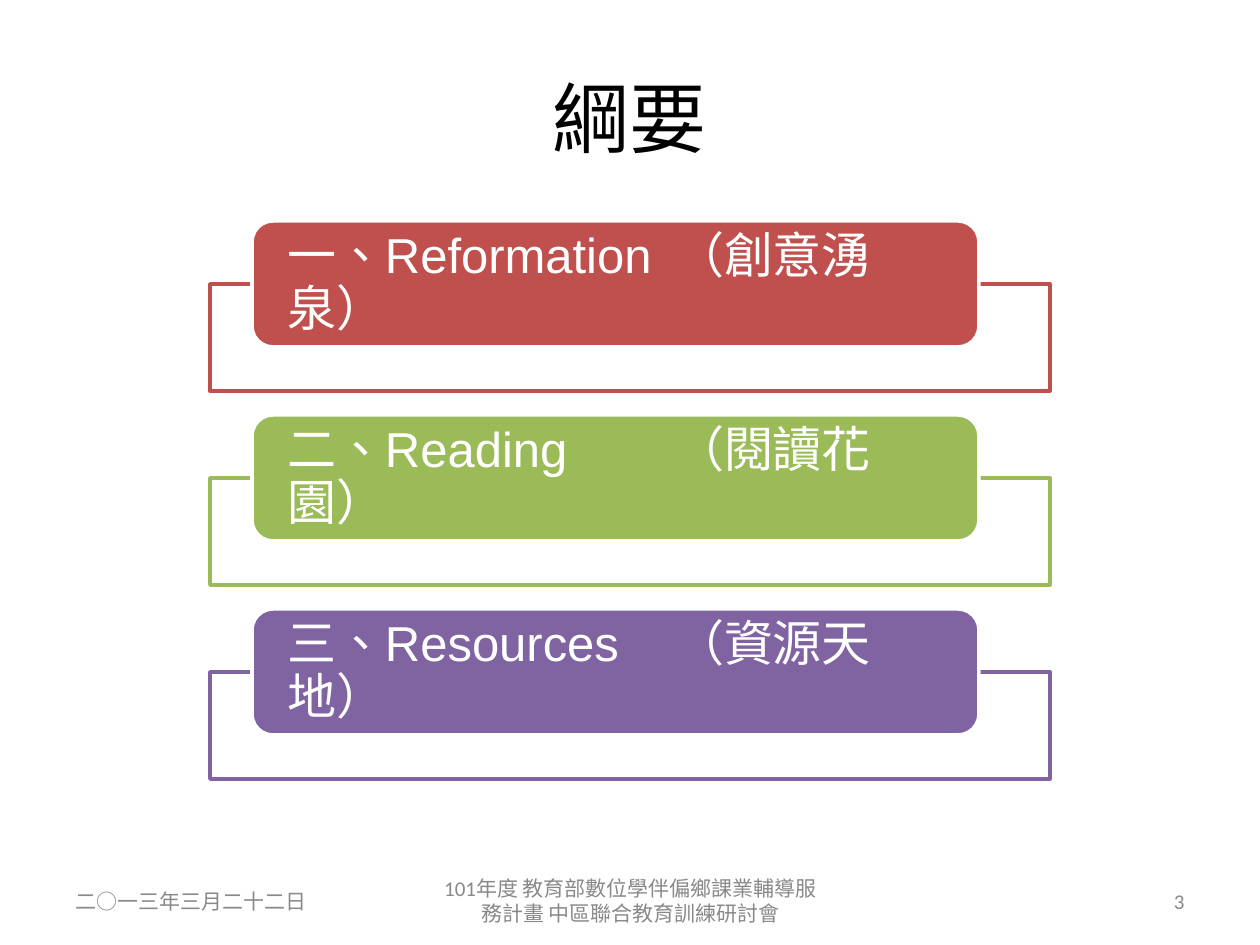
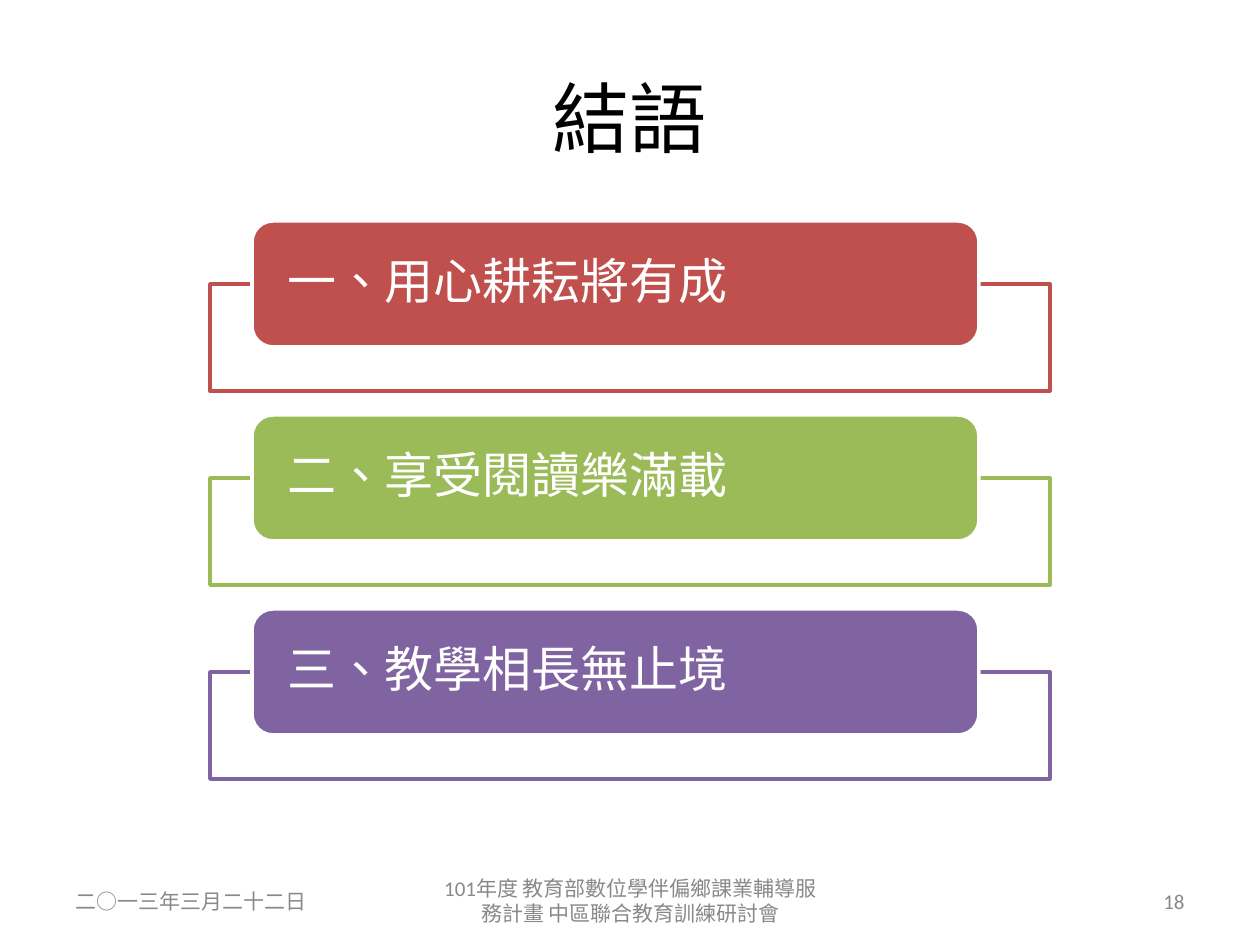
from dataclasses import dataclass

from lxml import etree
from pptx import Presentation
from pptx.dml.color import RGBColor
from pptx.enum.lang import MSO_LANGUAGE_ID
from pptx.enum.shapes import MSO_SHAPE
from pptx.enum.text import MSO_ANCHOR, PP_ALIGN
from pptx.oxml.ns import qn
from pptx.util import Pt

LEFT, CENTER, RIGHT = PP_ALIGN.LEFT, PP_ALIGN.CENTER, PP_ALIGN.RIGHT
MIDDLE = MSO_ANCHOR.MIDDLE
RECTANGLE, ROUNDED = MSO_SHAPE.RECTANGLE, MSO_SHAPE.ROUNDED_RECTANGLE
CHINESE = MSO_LANGUAGE_ID.TRADITIONAL_CHINESE

EMU_PER_PX = 914400 / 126
BLANK_LAYOUT = 6


@dataclass(frozen=True)
class Theme:
    black: str = "000000"
    white: str = "FFFFFF"
    grey: str = "898989"
    sections: tuple = ("C0504D", "9BBB59", "8064A2")
    title_font: str = "Noto Sans CJK SC"
    section_font: str = "Arial"
    footer_font: str = "Calibri"
    title_size: int = 44
    section_size: int = 28
    footer_size: int = 12
    line_width: int = 2


THEME = Theme()

DATE = "二○一三年三月二十二日"
EVENT = "101年度 教育部數位學伴偏鄉課業輔導服務計畫 中區聯合教育訓練研討會"

# Title, page number, section labels; a tab leads to the bracketed name
SLIDES = (
    ("綱要", 3, ("一、Reformation\t（創意湧泉）",
                 "二、Reading\t（閱讀花園）",
                 "三、Resources\t（資源天地）")),
    ("結語", 18, ("一、用心耕耘將有成",
                  "二、享受閱讀樂滿載",
                  "三、教學相長無止境")),
)

# Geometry in px: left, top, width, height
TITLE_BOX = (63, 38, 1134, 157)
FOOTER_TOP, FOOTER_HEIGHT = 876, 50
FRAME_BOX = (210, 284, 840, 107)
LABEL_BOX = (252, 221, 727, 126)
SECTION_PITCH = 194
BRACKET_TAB = 388


def px(length):
    return round(length * EMU_PER_PX)


def apply_formats(target, formats):
    for attribute, value in formats.items():
        setattr(target, attribute, value)


def write(shape, text, font, size, color, align):
    """Put one middle-anchored paragraph into a shape and return it."""
    apply_formats(shape.text_frame, {"word_wrap": True, "vertical_anchor": MIDDLE})
    paragraph = shape.text_frame.paragraphs[0]
    paragraph.alignment = align
    run = paragraph.add_run()
    run.text = text
    apply_formats(run.font, {"name": font, "size": Pt(size), "language_id": CHINESE})
    run.font.color.rgb = RGBColor.from_string(color)
    return paragraph


def add_text(slide, box, *style):
    write(slide.shapes.add_textbox(*map(px, box)), *style)


def add_panel(slide, kind, box, fill, line):
    panel = slide.shapes.add_shape(kind, *map(px, box))
    panel.shadow.inherit = False
    panel.fill.solid()
    panel.fill.fore_color.rgb = RGBColor.from_string(fill)
    panel.line.color.rgb = RGBColor.from_string(line)
    panel.line.width = Pt(THEME.line_width)
    return panel


def add_tab_stop(paragraph, position):
    stops = etree.SubElement(paragraph._p.get_or_add_pPr(), qn("a:tabLst"))
    etree.SubElement(stops, qn("a:tab"), pos=str(px(position)), algn="l")


def add_section(slide, index, label, color):
    """Draw an outlined frame with a coloured label over its top edge."""
    def shifted(box):
        left, top, width, height = box
        return left, top + index * SECTION_PITCH, width, height

    frame = add_panel(slide, RECTANGLE, shifted(FRAME_BOX), THEME.white, color)
    frame_color = frame.fill._xPr.find(qn("a:solidFill"))[0]
    etree.SubElement(frame_color, qn("a:alpha"), val="90000")

    plate = add_panel(slide, ROUNDED, shifted(LABEL_BOX), color, THEME.white)
    apply_formats(plate.text_frame, {
        "margin_left": px(29), "margin_right": px(29),
        "margin_top": px(6), "margin_bottom": px(6),
    })
    paragraph = write(plate, label, THEME.section_font, THEME.section_size,
                      THEME.white, LEFT)
    paragraph.line_spacing = 0.9
    if "\t" in label:
        add_tab_stop(paragraph, BRACKET_TAB)


def add_footer(slide, page):
    parts = ((63, 294, DATE, LEFT), (431, 399, EVENT, CENTER),
             (903, 294, str(page), RIGHT))
    for left, width, text, align in parts:
        add_text(slide, (left, FOOTER_TOP, width, FOOTER_HEIGHT), text,
                 THEME.footer_font, THEME.footer_size, THEME.grey, align)


def main():
    deck = Presentation()
    apply_formats(deck, {"slide_width": px(1260), "slide_height": px(945)})
    for title, page, labels in SLIDES:
        slide = deck.slides.add_slide(deck.slide_layouts[BLANK_LAYOUT])
        add_text(slide, TITLE_BOX, title, THEME.title_font, THEME.title_size,
                 THEME.black, CENTER)
        add_footer(slide, page)
        for index, (label, color) in enumerate(zip(labels, THEME.sections)):
            add_section(slide, index, label, color)
    deck.save("out.pptx")


if __name__ == "__main__":
    main()
